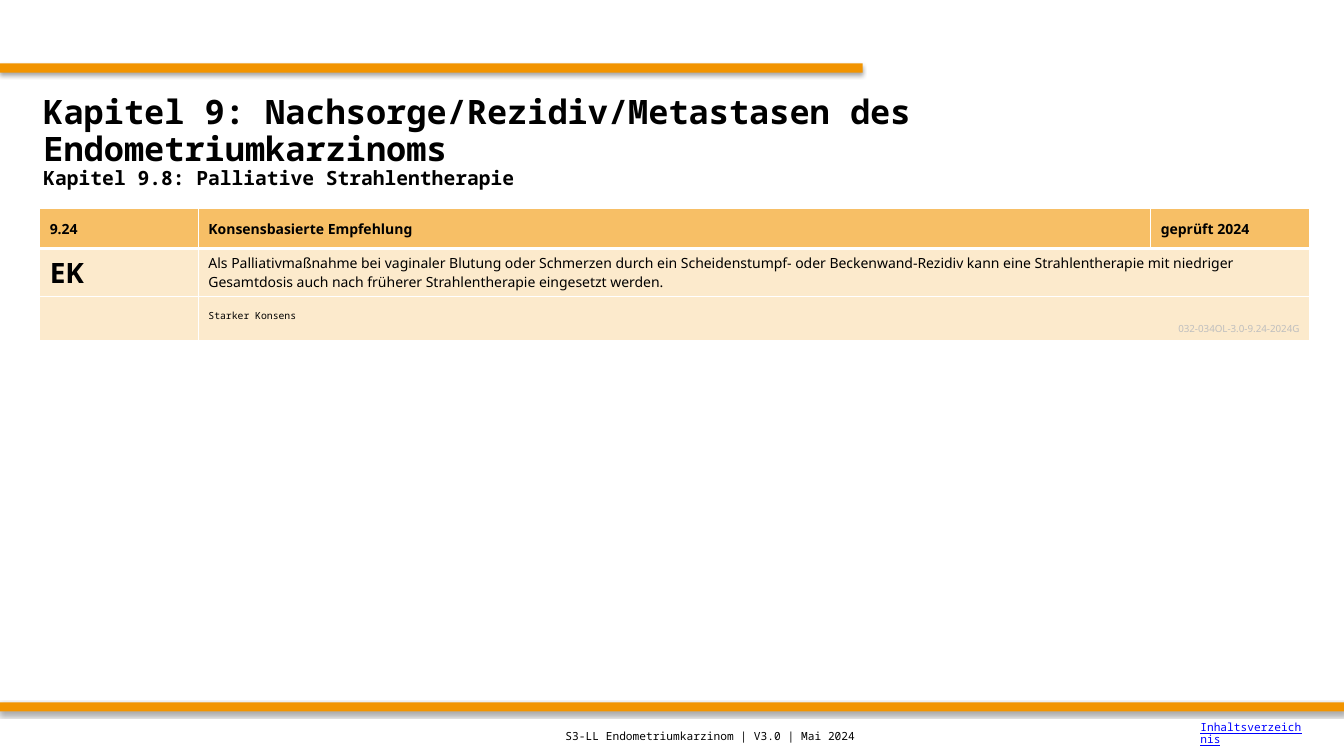
from lxml import etree
from pptx import Presentation
from pptx.dml.color import RGBColor
from pptx.enum.shapes import MSO_SHAPE
from pptx.enum.text import MSO_ANCHOR, MSO_AUTO_SIZE, PP_ALIGN
from pptx.oxml import parse_xml
from pptx.oxml.ns import nsdecls
from pptx.util import Cm, Pt

RECTANGLE = MSO_SHAPE.RECTANGLE
TOP, MIDDLE, BOTTOM = MSO_ANCHOR.TOP, MSO_ANCHOR.MIDDLE, MSO_ANCHOR.BOTTOM
LEFT, RIGHT = PP_ALIGN.LEFT, PP_ALIGN.RIGHT
NO_AUTOFIT = MSO_AUTO_SIZE.NONE

ORANGE = RGBColor(0xF2, 0x94, 0x00)
HEADER_ORANGE = RGBColor(0xF7, 0xBF, 0x66)
PALE_ORANGE = RGBColor(0xFC, 0xEA, 0xCC)
BLACK = RGBColor(0, 0, 0)
GREY = RGBColor(0xBF, 0xBF, 0xBF)
LINK_BLUE = RGBColor(0, 0, 0xFF)
SANS, MONO = "Noto Sans", "Noto Sans Mono"

SLIDE_WIDTH, SLIDE_HEIGHT = 33.87, 19.05
BAR_HEIGHT = 0.23
BARS = [(1.6, 21.74), (17.7, SLIDE_WIDTH)]  # top, width

# A line of text: wording, size, font, bold, colour, alignment
TITLE = [
    ("Kapitel 9: Nachsorge/Rezidiv/Metastasen des Endometriumkarzinoms",
     24, MONO, True, BLACK, LEFT),
    ("Kapitel 9.8: Palliative Strahlentherapie", 14, MONO, True, BLACK, LEFT),
]
HEADER = ["9.24", "Konsensbasierte Empfehlung", "geprüft 2024"]
GRADE = [("EK", 20, SANS, True, BLACK, LEFT)]
RECOMMENDATION = [
    ("Als Palliativmaßnahme bei vaginaler Blutung oder Schmerzen durch ein "
     "Scheidenstumpf- oder Beckenwand-Rezidiv kann eine Strahlentherapie mit "
     "niedriger Gesamtdosis auch nach früherer Strahlentherapie eingesetzt "
     "werden.", 10, SANS, False, BLACK, LEFT),
]
CONSENSUS = [
    ("Starker Konsens", 7, MONO, False, BLACK, LEFT),
    ("032-034OL-3.0-9.24-2024G", 7, SANS, False, GREY, RIGHT),
]
TABLE_ROWS = [  # lines and anchor of each cell
    [([(label, 10, SANS, True, BLACK, LEFT)], MIDDLE) for label in HEADER],
    [(GRADE, TOP), (RECOMMENDATION, TOP)],
    [([], TOP), (CONSENSUS, BOTTOM)],
]
COLUMN_WIDTHS = [4, 24, 4]
ROW_HEIGHTS = [1, 1.2, 1.1]
FOOTER = [("S3-LL Endometriumkarzinom | V3.0 | Mai 2024",
           8, MONO, False, BLACK, LEFT)]
CONTENTS = [("Inhaltsverzeichnis", 8, MONO, False, LINK_BLUE, LEFT)]


def write(frame, lines, spacing=1.0, underline=None):
    for index, (wording, size, font, bold, colour, align) in enumerate(lines):
        paragraph = frame.add_paragraph() if index else frame.paragraphs[0]
        paragraph.alignment = align
        paragraph.line_spacing = spacing
        run = paragraph.add_run()
        run.text = wording
        run.font.size = Pt(size)
        run.font.name = font
        run.font.bold = bold
        run.font.underline = underline
        run.font.color.rgb = colour


def add_bar(slide, top, width):
    bar = slide.shapes.add_shape(RECTANGLE, 0, Cm(top), Cm(width), Cm(BAR_HEIGHT))
    bar.fill.solid()
    bar.fill.fore_color.rgb = ORANGE
    bar.line.fill.background()
    bar._element.spPr.append(parse_xml(
        f'<a:effectLst {nsdecls("a")}><a:outerShdw blurRad="{Pt(3.1)}" '
        f'dist="{Pt(1.8)}" dir="5400000" rotWithShape="0">'
        '<a:srgbClr val="000000"><a:alpha val="35000"/></a:srgbClr>'
        '</a:outerShdw></a:effectLst>'))


def set_white_borders(cell, bottom_width):
    properties = cell._tc.get_or_add_tcPr()
    for index, side in enumerate("LRTB"):
        width = Pt(bottom_width if side == "B" else 1)
        border = parse_xml(f'<a:ln{side} {nsdecls("a")} w="{width}"/>')
        fill = etree.SubElement(border, border.tag.split("}")[0] + "}solidFill")
        etree.SubElement(fill, border.tag.split("}")[0] + "}srgbClr", val="FFFFFF")
        properties.insert(index, border)


def add_recommendation_table(slide):
    table = slide.shapes.add_table(
        len(ROW_HEIGHTS), len(COLUMN_WIDTHS), Cm(1), Cm(5.26),
        Cm(sum(COLUMN_WIDTHS)), Cm(sum(ROW_HEIGHTS))).table
    for column, width in zip(table.columns, COLUMN_WIDTHS):
        column.width = Cm(width)
    for r, (height, cells) in enumerate(zip(ROW_HEIGHTS, TABLE_ROWS)):
        table.rows[r].height = Cm(height)
        for c in range(len(COLUMN_WIDTHS)):
            cell = table.cell(r, c)
            cell.fill.solid()
            cell.fill.fore_color.rgb = PALE_ORANGE if r else HEADER_ORANGE
            set_white_borders(cell, 1 if r else 3)
        if len(cells) < len(COLUMN_WIDTHS):
            table.cell(r, 1).merge(table.cell(r, 2))
        for c, (lines, anchor) in enumerate(cells):
            table.cell(r, c).vertical_anchor = anchor
            write(table.cell(r, c).text_frame, lines)


def add_label(slide, left, top, width, lines, **style):
    frame = slide.shapes.add_textbox(Cm(left), Cm(top), Cm(width), Cm(1)).text_frame
    frame.word_wrap = True
    frame.vertical_anchor = MIDDLE
    write(frame, lines, **style)


def main():
    deck = Presentation()
    deck.slide_width, deck.slide_height = Cm(SLIDE_WIDTH), Cm(SLIDE_HEIGHT)
    slide = deck.slides.add_slide(deck.slide_layouts[5])
    for top, width in BARS:
        add_bar(slide, top, width)

    title = slide.shapes.title
    title.left, title.top = Cm(0.84), Cm(2.11)
    title.width, title.height = Cm(32.18), Cm(2.97)
    title.text_frame.auto_size = NO_AUTOFIT
    title.text_frame.vertical_anchor = MIDDLE
    write(title.text_frame, TITLE, spacing=0.9)

    add_recommendation_table(slide)
    add_label(slide, 14, 18.05, 14, FOOTER)
    add_label(slide, 30, 18, 3.1, CONTENTS, spacing=0.9, underline=True)
    deck.save("out.pptx")


if __name__ == "__main__":
    main()
